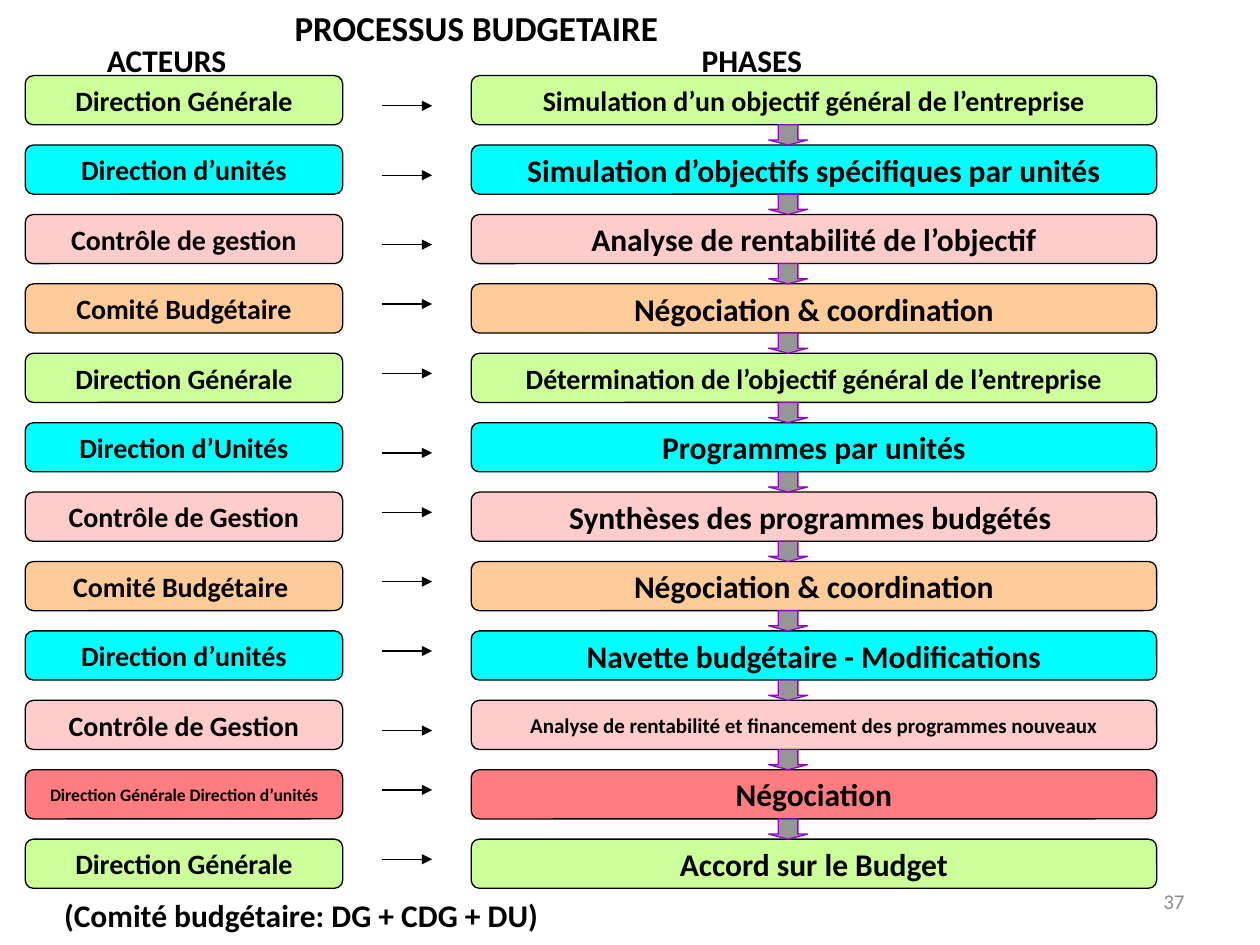
from lxml import etree
from pptx import Presentation
from pptx.dml.color import RGBColor
from pptx.enum.shapes import MSO_CONNECTOR, MSO_SHAPE
from pptx.enum.text import MSO_ANCHOR, PP_ALIGN
from pptx.oxml.ns import qn
from pptx.util import Inches, Pt

ROUNDED, DOWN_ARROW = MSO_SHAPE.ROUNDED_RECTANGLE, MSO_SHAPE.DOWN_ARROW
STRAIGHT = MSO_CONNECTOR.STRAIGHT
TOP, MIDDLE = MSO_ANCHOR.TOP, MSO_ANCHOR.MIDDLE
LEFT, CENTER, RIGHT = PP_ALIGN.LEFT, PP_ALIGN.CENTER, PP_ALIGN.RIGHT

COLORS = {
    "green": "CCFF99", "cyan": "00FFFF", "pink": "FFCCCC", "orange": "FFCC99",
    "red": "FF7C80", "black": "000000", "grey": "969696", "purple": "9900CC",
    "number": "8C8C8C",
}
FONT = "Calibri"

# Height of each link arrow below the top of its row
HIGH, LOW = 0.16, 0.24

# Actor, actor size, phase, phase size, colour, link height
STEPS = [
    ("Direction Générale", 16, "Simulation d’un objectif général de l’entreprise", 16, "green", LOW),
    ("Direction d’unités", 16, "Simulation d’objectifs spécifiques par unités", 18, "cyan", LOW),
    ("Contrôle de gestion", 16, "Analyse de rentabilité de l’objectif", 18, "pink", LOW),
    ("Comité Budgétaire", 16, "Négociation & coordination", 18, "orange", HIGH),
    ("Direction Générale", 16, "Détermination de l’objectif général de l’entreprise", 16, "green", HIGH),
    ("Direction d’Unités", 16, "Programmes par unités", 18, "cyan", LOW),
    ("Contrôle de Gestion", 16, "Synthèses des programmes budgétés ", 18, "pink", HIGH),
    ("Comité Budgétaire ", 16, "Négociation & coordination", 18, "orange", HIGH),
    ("Direction d’unités", 16, "Navette budgétaire - Modifications", 18, "cyan", HIGH),
    ("Contrôle de Gestion", 16, "Analyse de rentabilité et financement des programmes nouveaux", 12, "pink", LOW),
    ("Direction Générale Direction d’unités", 10, "Négociation", 18, "red", HIGH),
    ("Direction Générale", 16, "Accord sur le Budget", 18, "green", HIGH),
]

# Text, left, top, width, height, size
LABELS = [
    ("PROCESSUS BUDGETAIRE", 2.24, 0, 4.17, 0.43, 20),
    ("ACTEURS", 0.75, 0.28, 1.89, 0.4, 18),
    ("PHASES", 5.47, 0.28, 1.89, 0.4, 18),
    ("(Comité budgétaire: DG + CDG + DU)", 0.41, 7.06, 4.75, 0.4, 18),
]

# Layout
FIRST_TOP, LAST_TOP, BOX_HEIGHT = 0.6, 6.66, 0.39
PITCH = (LAST_TOP - FIRST_TOP) / (len(STEPS) - 1)
ACTOR_LEFT, ACTOR_WIDTH = 0.2, 2.52
PHASE_LEFT, PHASE_WIDTH = 3.74, 5.44
LINK_START, LINK_END = 3.03, 3.43
DOWN_LEFT, DOWN_WIDTH = 6.1, 0.31


def rgb(name):
    return RGBColor.from_string(COLORS[name])


def write(shape, text, size, align, anchor, color="black", bold=True, wrap=True):
    frame = shape.text_frame
    frame.text = text
    frame.word_wrap = wrap
    frame.vertical_anchor = anchor
    paragraph = frame.paragraphs[0]
    paragraph.alignment = align
    font = paragraph.runs[0].font
    font.name, font.size, font.bold = FONT, Pt(size), bold
    font.color.rgb = rgb(color)


def add_label(slide, text, left, top, width, height, size, align=LEFT, anchor=TOP, **style):
    label = slide.shapes.add_textbox(Inches(left), Inches(top), Inches(width), Inches(height))
    write(label, text, size, align, anchor, **style)


def add_block(slide, kind, left, top, width, height, fill, line):
    block = slide.shapes.add_shape(kind, Inches(left), Inches(top), Inches(width), Inches(height))
    block.shadow.inherit = False
    block.fill.solid()
    block.fill.fore_color.rgb = rgb(fill)
    block.line.color.rgb = rgb(line)
    block.line.width = Pt(0.75)
    return block


def add_box(slide, text, size, left, top, width, fill):
    box = add_block(slide, ROUNDED, left, top, width, BOX_HEIGHT, fill, "black")
    write(box, text, size, CENTER, MIDDLE, wrap=False)


def add_link(slide, y):
    link = slide.shapes.add_connector(
        STRAIGHT, Inches(LINK_START), Inches(y), Inches(LINK_END), Inches(y))
    link.line.color.rgb = rgb("black")
    link.line.width = Pt(0.75)
    etree.SubElement(link.line._get_or_add_ln(), qn("a:tailEnd"), type="triangle")
    etree.SubElement(link._element.spPr, qn("a:effectLst"))


def main():
    prs = Presentation()
    prs.slide_width, prs.slide_height = Inches(10), Inches(7.5)
    slide = prs.slides.add_slide(prs.slide_layouts[6])

    # Slide number
    add_label(slide, "37", 7.17, 6.95, 2.33, 0.4, 12, RIGHT, MIDDLE, color="number", bold=False)

    # One row per step: actor, link, phase
    tops = [FIRST_TOP + i * PITCH for i in range(len(STEPS))]
    for top, (actor, actor_size, phase, phase_size, color, link) in zip(tops, STEPS):
        add_box(slide, actor, actor_size, ACTOR_LEFT, top, ACTOR_WIDTH, color)
        add_box(slide, phase, phase_size, PHASE_LEFT, top, PHASE_WIDTH, color)
        add_link(slide, top + link)

    # Down arrows fill the gaps between phases
    for top in tops[:-1]:
        add_block(slide, DOWN_ARROW, DOWN_LEFT, top + BOX_HEIGHT, DOWN_WIDTH,
                  PITCH - BOX_HEIGHT, "grey", "purple").adjustments[1] = 0.25

    # Title, column headings and footnote
    for label in LABELS:
        add_label(slide, *label)

    prs.save("out.pptx")


if __name__ == "__main__":
    main()
